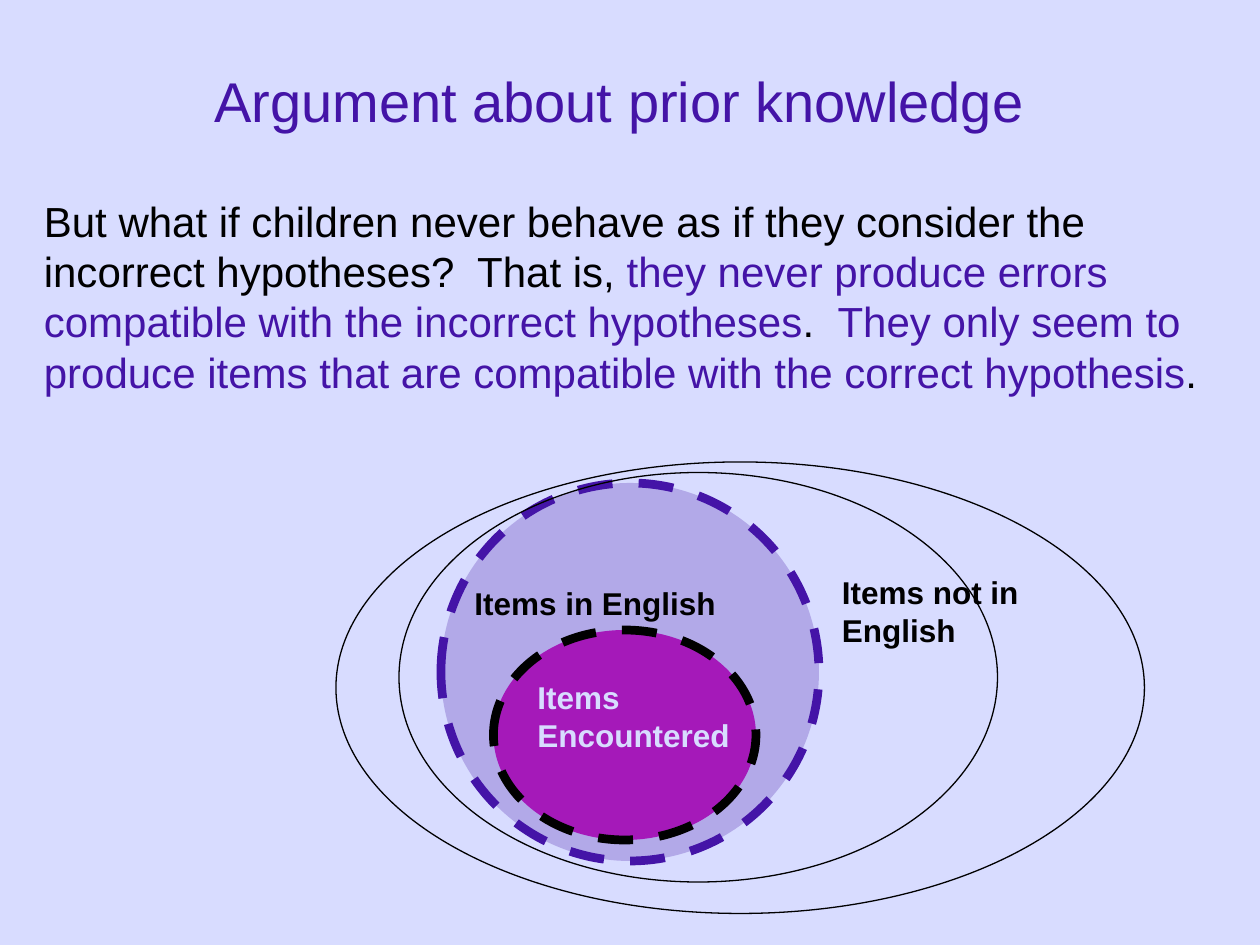
import pptx
import pptx.util
import pptx.dml.color
import pptx.enum.dml
import pptx.enum.shapes
import pptx.enum.text
import pptx.oxml

HUES = {"back": "D8DCFF", "ink": "000000", "mark": "4414A7", "core": "A519B9"}
WIDE, HIGH = 10, 7.5
COLS, ROWS = 120, 90

TITLE = [("Argument about prior knowledge", "mark")]
BODY = [
    ("But what if children never behave as if they consider the incorrect hypotheses?  That is, ", "ink"),
    ("they never produce errors compatible with the incorrect hypotheses", "mark"),
    (".  ", "ink"),
    ("They only seem to produce items that are compatible with the correct hypothesis", "mark"),
    (".", "ink"),
]
RINGS = [
    {"box": (32, 44, 77, 43)},
    {"box": (42, 46, 36, 36), "fill": "mark", "alpha": 25, "line": "mark", "dash": True},
    {"box": (47, 60, 25, 20), "fill": "core", "dash": True},
]
LABELS = [
    ("Items Encountered", "back", (50, 64, 21, 8.4), True),
    ("Items in English", "ink", (44, 55, 25.4, 4.8), False),
    ("Items not in English", "ink", (79, 54, 21, 8.4), True),
]
OUTER = {"box": (38, 45, 57, 39)}

deck = pptx.Presentation()
deck.slide_width = pptx.util.Inches(WIDE)
deck.slide_height = pptx.util.Inches(HIGH)
slide = deck.slides.add_slide(deck.slide_layouts[6])


def hue(name):
    return pptx.dml.color.RGBColor.from_string(HUES[name])


def place(box):
    units = (WIDE / COLS, HIGH / ROWS) * 2
    return [pptx.util.Inches(n * unit) for n, unit in zip(box, units)]


def write(runs, box, size=18, bold=False, wrap=True, align="LEFT", anchor="TOP"):
    frame = slide.shapes.add_textbox(*place(box)).text_frame
    frame.word_wrap = wrap
    frame.vertical_anchor = getattr(pptx.enum.text.MSO_ANCHOR, anchor)
    para = frame.paragraphs[0]
    para.alignment = getattr(pptx.enum.text.PP_ALIGN, align)
    for text, tint in runs:
        run = para.add_run()
        run.text = text
        run.font.name = "Arial"
        run.font.size = pptx.util.Pt(size)
        run.font.bold = bold
        run.font.color.rgb = hue(tint)


def draw(box, fill=None, alpha=None, line="ink", dash=False):
    ring = slide.shapes.add_shape(pptx.enum.shapes.MSO_SHAPE.OVAL, *place(box))
    ring.shadow.inherit = False
    if fill:
        ring.fill.solid()
        ring.fill.fore_color.rgb = hue(fill)
    else:
        ring.fill.background()
    if alpha:
        tint = ring.fill._xPr.find(".//" + pptx.oxml.ns.qn("a:srgbClr"))
        node = pptx.oxml.parse_xml(
            f'<a:alpha {pptx.oxml.ns.nsdecls("a")} val="{alpha * 1000}"/>')
        tint.append(node)
    ring.line.color.rgb = hue(line)
    ring.line.width = pptx.util.Pt(5 if dash else 0.75)
    if dash:
        ring.line.dash_style = pptx.enum.dml.MSO_LINE.DASH


slide.background.fill.solid()
slide.background.fill.fore_color.rgb = hue("back")
write(TITLE, (8, 2, 102, 15), size=32, align="CENTER", anchor="MIDDLE")
write(BODY, (3, 18, 113, 20.4), size=24)
for ring in RINGS:
    draw(**ring)
for text, tint, box, wrap in LABELS:
    write([(text, tint)], box, bold=True, wrap=wrap)
draw(**OUTER)
deck.save("out.pptx")
